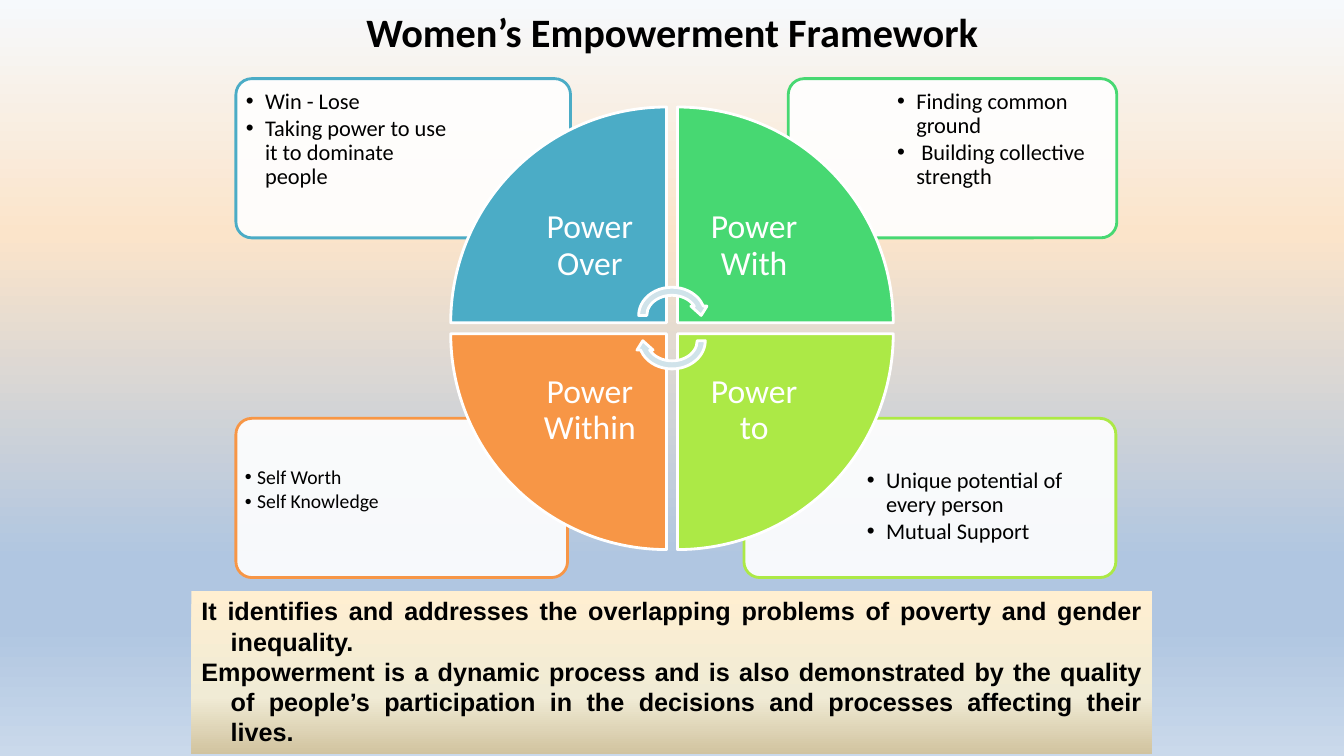
from dataclasses import dataclass
from lxml.etree import SubElement
from pptx import Presentation
from pptx.dml.color import RGBColor
from pptx.enum.shapes import MSO_SHAPE
from pptx.enum.text import MSO_ANCHOR, PP_ALIGN
from pptx.oxml.ns import qn
from pptx.util import Inches, Pt

# Grid of square cells, a tenth of an inch each
COLS, ROWS = 133.33, 75
MID_X, MID_Y = COLS / 2, 32.57
GAP, WEDGE, LABEL = 1.1, 21.4, 15.2

HUES = {
    "black": "000000", "white": "FFFFFF", "arrow": "D0E3EA",
    "blue": "4BACC6", "green": "47D872", "lime": "ACE946", "orange": "F79646",
}
SKY = [(0, "F6F9FC"), (31, "FBE4CA"), (74, "B0C6E1"), (83, "B0C6E1"), (100, "CAD9EB")]
SAND = [(0, "FFEFD1"), (65, "F0EBD5"), (100, "D1C39F")]


@dataclass
class Box:
    x: float
    y: float
    w: float
    h: float


@dataclass
class Power:
    name: str
    hue: str
    right: bool
    low: bool
    turn: int
    card: Box
    text: Box
    points: list[str]
    size: int = 16
    dent: float = 1.9
    inset: float = 0.7


POWERS = [
    Power("Power to", "lime", True, True, 180, Box(73.8, 41.5, 36.9, 15.8),
          Box(85.3, 45.8, 25.2, 11.2), ["Unique potential of every person", "Mutual Support"]),
    Power("Power Within", "orange", False, True, 270, Box(23.4, 41.5, 32.9, 15.8),
          Box(23.7, 45.8, 22.3, 11.2), ["Self Worth", "Self Knowledge"], 14, 1.2, 0.6),
    Power("Power With", "green", True, False, 90, Box(78.2, 7.8, 32.6, 15.8),
          Box(88.3, 8.2, 22.1, 11.2), ["Finding common ground", " Building collective strength"]),
    Power("Power Over", "blue", False, False, 0, Box(23.4, 7.8, 33.2, 15.8),
          Box(23.7, 8.2, 22.6, 11.2), ["Win - Lose", "Taking power to use it to dominate people"]),
]
CLAIMS = [
    "It identifies and addresses the overlapping problems of poverty and gender inequality.",
    "Empowerment is a dynamic process and is also demonstrated by the quality of people’s "
    "participation in the decisions and processes affecting their lives.",
]


def cell(num: float) -> int:
    return Inches(num / 10)


def place(box: Box) -> list[int]:
    return [cell(num) for num in (box.x, box.y, box.w, box.h)]


def tint(name: str) -> RGBColor:
    return RGBColor.from_string(HUES[name])


def blend(fill, root, stops: list[tuple[int, str]]) -> None:
    """Fill from top to bottom with the given stops; root holds the fill's XML."""
    fill.gradient()
    fill.gradient_angle = 270
    row = next(root.iter(qn("a:gsLst")))
    row.clear()
    for pos, hue in stops:
        stop = SubElement(row, qn("a:gs"), pos=str(pos * 1000))
        SubElement(stop, qn("a:srgbClr"), val=hue)


def shape(slide, kind, box: Box, fill: str, line: str, turn: int = 0):
    item = slide.shapes.add_shape(kind, *place(box))
    item.shadow.inherit = False
    item.fill.solid()
    item.fill.fore_color.rgb = tint(fill)
    item.line.color.rgb = tint(line)
    item.line.width = Pt(2)
    item.rotation = turn
    return item


def write(frame, lines: list[str], size: float, hue: str = "black", face: str = "Calibri",
          bold: bool = False, align=PP_ALIGN.LEFT, dent: float = 0, mark: str = "",
          lead: float = 1, after: float = 0, inset: float | None = None,
          anchor=MSO_ANCHOR.TOP) -> None:
    """Set the lines as paragraphs; dent hangs, and after is a share of the size."""
    frame.word_wrap = True
    frame.vertical_anchor = anchor
    if inset is not None:
        frame.margin_left = frame.margin_right = cell(inset)
        frame.margin_top = frame.margin_bottom = cell(inset)
    for num, line in enumerate(lines):
        para = frame.add_paragraph() if num else frame.paragraphs[0]
        para.text = line
        para.alignment = align
        para.line_spacing = lead
        para.space_after = Pt(size * after)
        props = para._p.get_or_add_pPr()
        if dent:
            props.set("marL", str(cell(dent)))
            props.set("indent", str(-cell(dent)))
        if mark:
            SubElement(props, qn("a:buFont"), typeface="Arial")
            SubElement(props, qn("a:buChar"), char=mark)
        font = para.font
        font.size, font.name, font.bold = Pt(size), face, bold
        font.color.rgb = tint(hue)


def text(slide, box: Box, lines: list[str], size: float, **style) -> None:
    write(slide.shapes.add_textbox(*place(box)).text_frame, lines, size, **style)


def card(slide, power: Power) -> None:
    item = shape(slide, MSO_SHAPE.ROUNDED_RECTANGLE, power.card, "white", power.hue)
    item.adjustments[0] = 0.1
    shade = item._element.spPr.find(qn("a:solidFill")).find(qn("a:srgbClr"))
    SubElement(shade, qn("a:alpha"), val="90000")
    text(slide, power.text, power.points, power.size, dent=power.dent, mark="•",
         lead=0.9, after=0.15, inset=power.inset)


def square(power: Power, side: float) -> Box:
    """Square in the power's quarter, with its corner at the hub."""
    x = MID_X + GAP / 2 if power.right else MID_X - GAP / 2 - side
    y = MID_Y + GAP / 2 if power.low else MID_Y - GAP / 2 - side
    return Box(x, y, side, side)


def wedge(slide, power: Power) -> None:
    shape(slide, MSO_SHAPE.PIE_WEDGE, square(power, WEDGE), power.hue, "white", power.turn)
    text(slide, square(power, LABEL), [power.name], 24, hue="white", align=PP_ALIGN.CENTER,
         lead=0.9, inset=1.9, anchor=MSO_ANCHOR.MIDDLE)


def main() -> None:
    deck = Presentation()
    deck.slide_width, deck.slide_height = cell(COLS), cell(ROWS)
    slide = deck.slides.add_slide(deck.slide_layouts[6])
    blend(slide.background.fill, slide._element, SKY)

    text(slide, Box(21.7, 0, 90, 6.2), ["Women’s Empowerment Framework"], 28.8, bold=True,
         align=PP_ALIGN.CENTER, anchor=MSO_ANCHOR.MIDDLE)
    for power in POWERS:
        card(slide, power)
    for power in POWERS:
        wedge(slide, power)
    for y, turn in ((28.1, 0), (30.6, 180)):
        shape(slide, MSO_SHAPE.CIRCULAR_ARROW, Box(MID_X - 3.7, y, 7.4, 6.4),
              "arrow", "white", turn)

    panel = slide.shapes.add_shape(MSO_SHAPE.RECTANGLE, *place(Box(19, 58.6, 95.3, 16.2)))
    panel.shadow.inherit = False
    panel.line.fill.background()
    blend(panel.fill, panel._element, SAND)
    write(panel.text_frame, CLAIMS, 18, face="Arial", bold=True,
          align=PP_ALIGN.JUSTIFY, dent=2.9)
    deck.save("out.pptx")


if __name__ == "__main__":
    main()
